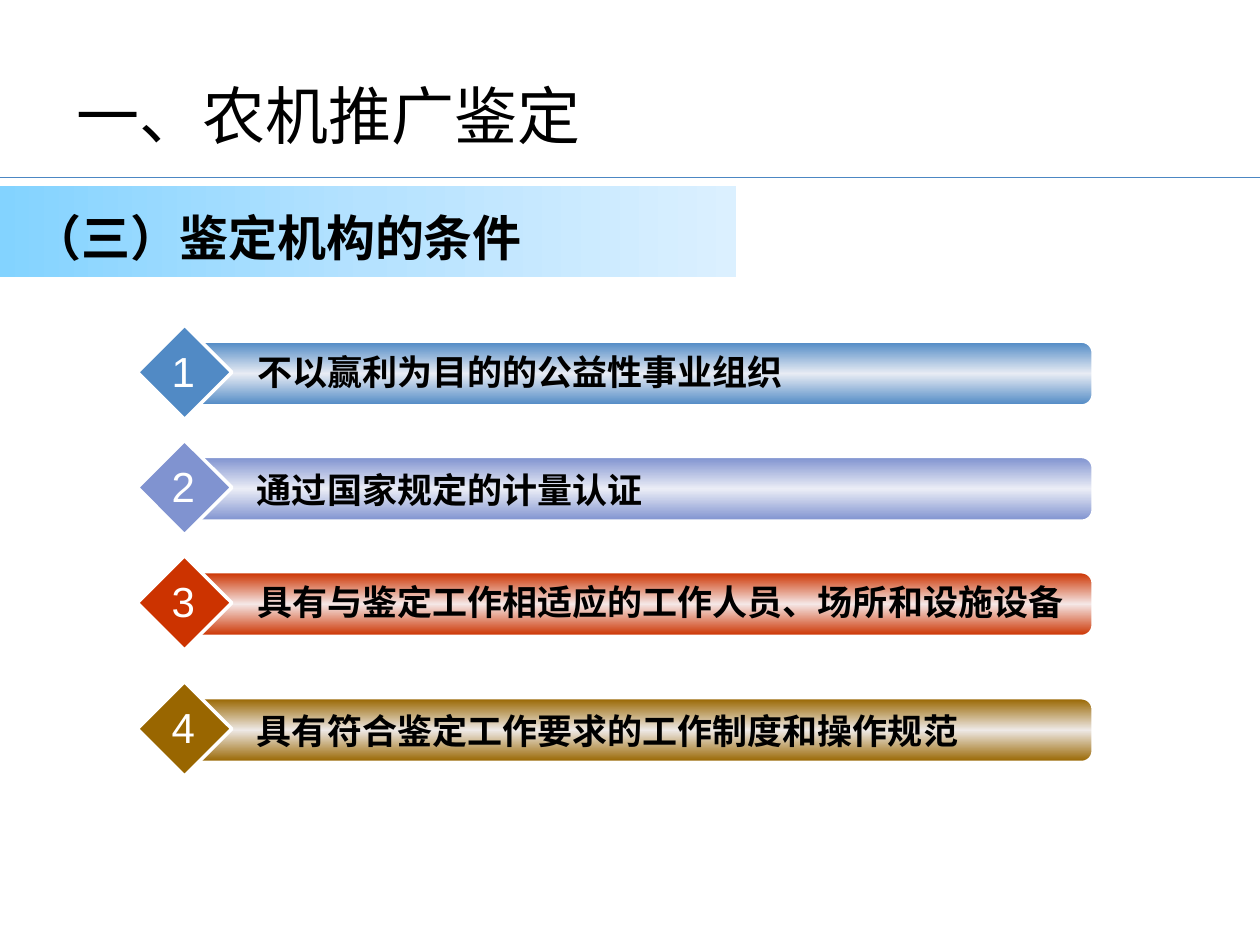
from lxml import etree
from pptx import Presentation
from pptx import util as u
from pptx.dml.color import RGBColor
from pptx.enum import shapes, text
from pptx.oxml import ns

CELL = 0.25  # inches; the slide is a grid of 40 columns by 30 rows
BLACK = RGBColor(0x00, 0x00, 0x00)
WHITE = RGBColor(0xFF, 0xFF, 0xFF)
RULE_BLUE = RGBColor(0x4C, 0x87, 0xC3)
BANNER = [RGBColor(0x83, 0xD3, 0xFF), RGBColor(0xB5, 0xE2, 0xFF), RGBColor(0xDB, 0xF0, 0xFF)]
BLUE, PALE_BLUE = RGBColor(0x51, 0x8A, 0xC5), RGBColor(0xE8, 0xEC, 0xF4)
VIOLET, PALE_VIOLET = RGBColor(0x80, 0x93, 0xD0), RGBColor(0xEB, 0xED, 0xF6)
RED, PALE_RED = RGBColor(0xCC, 0x33, 0x00), RGBColor(0xF5, 0xE7, 0xE6)
BROWN, PALE_BROWN = RGBColor(0x99, 0x66, 0x00), RGBColor(0xEE, 0xE9, 0xE6)

# wording, colour, highlight, diamond row, label row, label columns
CONDITIONS = [
    ("不以赢利为目的的公益性事业组织", BLUE, PALE_BLUE, 10.32, 10.92, 27.64),
    ("通过国家规定的计量认证", VIOLET, PALE_VIOLET, 13.98, 14.68, 19.2),
    ("具有与鉴定工作相适应的工作人员、场所和设施设备", RED, PALE_RED, 17.64, 18.24, 27.64),
    ("具有符合鉴定工作要求的工作制度和操作规范", BROWN, PALE_BROWN, 21.64, 22.32, 27.32),
]


def cells(*counts):
    return [u.Inches(count * CELL) for count in counts]


def fill_gradient(shape, colors, angle):
    """Spread the colours evenly along a clockwise angle in degrees."""
    shape.fill.gradient()
    gradient = shape.element.spPr.find(ns.qn("a:gradFill"))
    stops = gradient.find(ns.qn("a:gsLst"))
    for stop in list(stops):
        stops.remove(stop)
    for index, color in enumerate(colors):
        position = str(100000 * index // (len(colors) - 1))
        stop = etree.SubElement(stops, ns.qn("a:gs"), pos=position)
        etree.SubElement(stop, ns.qn("a:srgbClr"), val=str(color))
    gradient.find(ns.qn("a:lin")).set("ang", str(angle * 60000))


class SlideBuilder:
    latin = "Arial"
    chinese = "Noto Sans CJK SC"

    def __init__(self, page):
        self.page = page
        self.target = page.shapes

    def start_group(self):
        self.target = self.page.shapes.add_group_shape().shapes

    def shape(self, kind, place, color=None, gradient=None, angle=0, outline=0):
        shape = self.target.add_shape(kind, *cells(*place))
        shape.shadow.inherit = False
        if gradient:
            fill_gradient(shape, gradient, angle)
        else:
            shape.fill.solid()
            shape.fill.fore_color.rgb = color
        if outline:
            shape.line.color.rgb = WHITE
            shape.line.width = u.Pt(outline)
        else:
            shape.line.fill.background()
        return shape

    def rule(self, row, color, width):
        line = self.target.add_connector(
            shapes.MSO_CONNECTOR.STRAIGHT, *cells(0, row, 40, row))
        line.line.color.rgb = color
        line.line.width = u.Pt(width)
        etree.SubElement(line.element.spPr, ns.qn("a:effectLst"))

    def text(self, words, place, size, color=BLACK, font=chinese, bold=False,
             inset=0.1, wrap=True, grow=True, align=text.PP_ALIGN.LEFT,
             anchor=text.MSO_ANCHOR.TOP):
        box = self.target.add_textbox(*cells(*place))
        frame = box.text_frame
        frame.word_wrap = wrap
        frame.auto_size = (text.MSO_AUTO_SIZE.SHAPE_TO_FIT_TEXT if grow
                           else text.MSO_AUTO_SIZE.NONE)
        frame.vertical_anchor = anchor
        frame.margin_left = u.Inches(inset)
        para = frame.paragraphs[0]
        para.alignment = align
        span = para.add_run()
        span.text = words
        span.font.size = u.Pt(size)
        span.font.bold = bold
        span.font.color.rgb = color
        span.font.name = font
        etree.SubElement(span.font._element, ns.qn("a:ea"), typeface=font)

    def condition(self, number, words, color, pale, row, label_row, label_columns):
        self.start_group()
        bar = self.shape(shapes.MSO_SHAPE.ROUNDED_RECTANGLE, (6.04, row + 0.54, 28.64, 2),
                         gradient=[color, pale, color], angle=90, outline=1)
        bar.adjustments[0] = 0.17
        self.shape(shapes.MSO_SHAPE.DIAMOND, (4.36, row, 3, 3), color=color, outline=2)
        self.text(words, (7.04, label_row, label_columns, 1.76), 20, bold=True, inset=0.28)
        self.text(str(number), (5.04, row + 0.44, 1.56, 2), 24, color=WHITE,
                  font=self.latin, wrap=False, align=text.PP_ALIGN.CENTER)


def main():
    deck = Presentation()
    deck.slide_width, deck.slide_height = cells(40, 30)
    builder = SlideBuilder(deck.slides.add_slide(deck.slide_layouts[6]))
    builder.text("一、农机推广鉴定", (-0.32, 1.88, 36, 3.52), 36, inset=0.69,
                 grow=False, anchor=text.MSO_ANCHOR.MIDDLE)
    builder.rule(5.64, RULE_BLUE, 0.75)
    builder.shape(shapes.MSO_SHAPE.RECTANGLE, (0, 5.92, 23.36, 2.88), gradient=BANNER)
    builder.text("（三）鉴定机构的条件", (0.64, 6.4, 21.24, 2.28), 28, bold=True)
    for number, condition in enumerate(CONDITIONS, start=1):
        builder.condition(number, *condition)
    deck.save("out.pptx")


if __name__ == "__main__":
    main()
